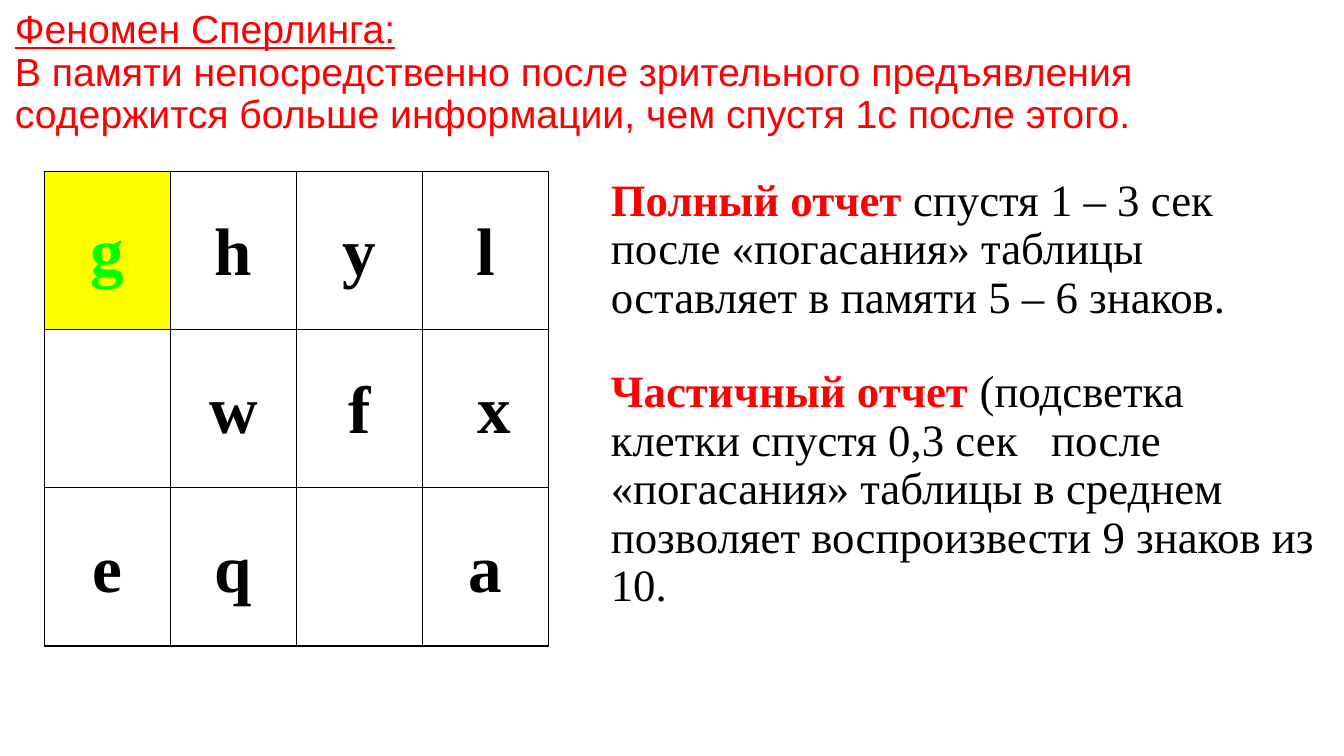
import pptx
import pptx.util
import pptx.dml.color
import pptx.enum.text
import pptx.oxml
from pptx.util import Inches

COLORS = {"red": "FF0000", "black": "000000", "green": "00FF00", "yellow": "FFFF00"}

HEADING = "Феномен Сперлинга:"
STATEMENT = ("В памяти непосредственно после зрительного предъявления "
             "содержится больше информации, чем спустя 1с после этого.")
# name of the report, what it shows, points of space before
REPORTS = [
    ("Полный отчет ",
     "спустя 1 – 3 сек после «погасания» таблицы оставляет в памяти 5 – 6 знаков.", 29),
    ("Частичный отчет ",
     "(подсветка клетки спустя 0,3 сек   после «погасания» таблицы в среднем "
     "позволяет воспроизвести 9 знаков из 10.", 33),
]
LETTERS = [
    ["g", "h", "y", "l"],
    ["", "w", "f", "\N{NO-BREAK SPACE}x"],
    ["e", "q", "", "a"],
]
HIGHLIGHTED = (0, 0)
CELL_WIDTH, CELL_HEIGHT = 1.25, 1.57
REPORT_INDENT = 5.91


def set_font(font, name, size, color, bold=False):
    font.name = name
    font.size = pptx.util.Pt(size)
    font.bold = bold
    font.color.rgb = pptx.dml.color.RGBColor.from_string(COLORS[color])


def add_borders(cell):
    properties = cell._tc.get_or_add_tcPr()
    for position, side in enumerate(("lnL", "lnR", "lnT", "lnB")):
        properties.insert(position, pptx.oxml.parse_xml(
            '<a:%s xmlns:a="http://schemas.openxmlformats.org/drawingml/2006/main" w="12700">'
            '<a:solidFill><a:srgbClr val="%s"/></a:solidFill></a:%s>'
            % (side, COLORS["black"], side)))


deck = pptx.Presentation()
deck.slide_width, deck.slide_height = Inches(13.33), Inches(7.5)
page = deck.slides.add_slide(deck.slide_layouts[6])

# Heading, statement and the two reports
box = page.shapes.add_textbox(Inches(0.05), Inches(0.05), Inches(13.15), Inches(7.32))
frame = box.text_frame
frame.word_wrap = True
for index, line in enumerate((HEADING, STATEMENT)):
    para = frame.paragraphs[0] if index == 0 else frame.add_paragraph()
    para.text = line
    para.line_spacing = 0.9
    set_font(para.font, "Arial", 28, "red")
    para.font.underline = index == 0
for name, finding, gap in REPORTS:
    para = frame.add_paragraph()
    para.line_spacing = 0.9
    para.space_before = pptx.util.Pt(gap)
    para._p.get_or_add_pPr().set("marL", str(Inches(REPORT_INDENT)))
    for words, color, bold in ((name, "red", True), (finding, "black", False)):
        span = para.add_run()
        span.text = words
        set_font(span.font, "Times New Roman", 32, color, bold)

# Letter table
rows, columns = len(LETTERS), len(LETTERS[0])
table = page.shapes.add_table(rows, columns, Inches(0.44), Inches(1.7),
                              Inches(CELL_WIDTH * columns),
                              Inches(CELL_HEIGHT * rows)).table
table.first_row = table.horz_banding = False
for row, letters in enumerate(LETTERS):
    for column, letter in enumerate(letters):
        cell = table.cell(row, column)
        cell.margin_left = cell.margin_right = Inches(0.07)
        cell.margin_top = cell.margin_bottom = 0
        cell.vertical_anchor = pptx.enum.text.MSO_ANCHOR.MIDDLE
        highlighted = (row, column) == HIGHLIGHTED
        if highlighted:
            cell.fill.solid()
            cell.fill.fore_color.rgb = pptx.dml.color.RGBColor.from_string(COLORS["yellow"])
        else:
            cell.fill.background()
        add_borders(cell)
        para = cell.text_frame.paragraphs[0]
        para.text = letter
        para.alignment = pptx.enum.text.PP_ALIGN.CENTER
        para.line_spacing = 1.07
        set_font(para.font, "Times New Roman", 48, "green" if highlighted else "black", True)

deck.save("out.pptx")
